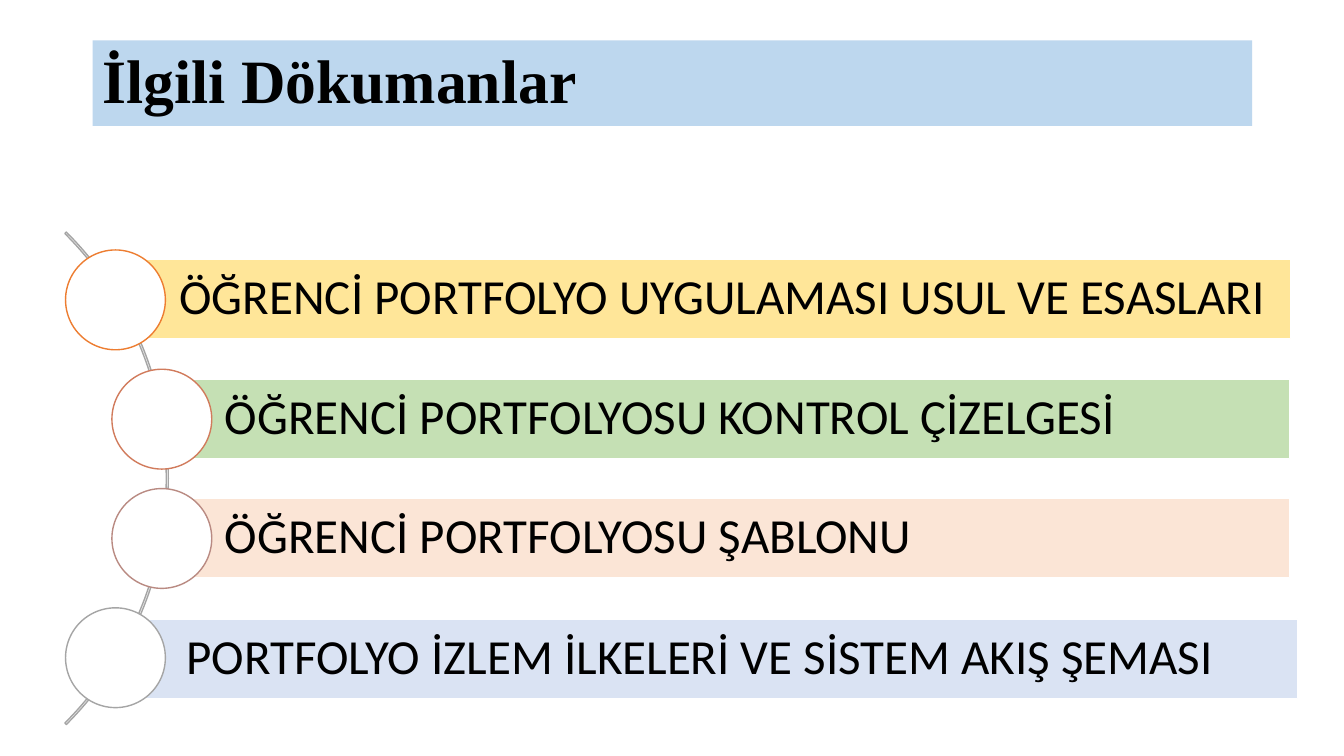
"""Builds the slide listing the related portfolio documents along an arc."""
from pptx import Presentation
from pptx.dml.color import RGBColor
from pptx.enum.shapes import MSO_SHAPE
from pptx.enum.text import MSO_ANCHOR, PP_ALIGN
from pptx.util import Inches, Pt

RECTANGLE = MSO_SHAPE.RECTANGLE
ELLIPSE = MSO_SHAPE.OVAL
BLOCK_ARC = MSO_SHAPE.BLOCK_ARC
MIDDLE = MSO_ANCHOR.MIDDLE
LEFT = PP_ALIGN.LEFT

BLACK = RGBColor(0x00, 0x00, 0x00)
WHITE = RGBColor(0xFF, 0xFF, 0xFF)
GRAY = RGBColor(0xA5, 0xA5, 0xA5)
TITLE_BLUE = RGBColor(0xBD, 0xD7, 0xEE)
YELLOW = RGBColor(0xFF, 0xE6, 0x99)
GREEN = RGBColor(0xC5, 0xE0, 0xB4)
PEACH = RGBColor(0xFB, 0xE5, 0xD6)
PALE_BLUE = RGBColor(0xDA, 0xE3, 0xF3)
ORANGE = RGBColor(0xED, 0x7D, 0x31)
COPPER = RGBColor(0xD1, 0x7B, 0x5C)
MAUVE = RGBColor(0xB9, 0x8A, 0x82)

CIRCLE_SIZE = 0.99
FIRST_CIRCLE_TOP = 2.48
ROW_PITCH = 3.55 / 3

DOCUMENTS = [
    ("ÖĞRENCİ PORTFOLYO UYGULAMASI USUL VE ESASLARI", 1.15, 2.57, 11.65, YELLOW, 0.65, ORANGE),
    ("ÖĞRENCİ PORTFOLYOSU KONTROL ÇİZELGESİ", 1.6, 3.76, 11.19, GREEN, 1.11, COPPER),
    ("ÖĞRENCİ PORTFOLYOSU ŞABLONU", 1.6, 4.94, 11.19, PEACH, 1.11, MAUVE),
    ("PORTFOLYO İZLEM İLKELERİ VE SİSTEM AKIŞ ŞEMASI", 1.22, 6.14, 11.65, PALE_BLUE, 0.65, GRAY),
]


def add_figure(kind, left, top, width, height, fill=None, line=None):
    shape = slide.shapes.add_shape(kind, Inches(left), Inches(top), Inches(width), Inches(height))
    shape.shadow.inherit = False
    if fill is None:
        shape.fill.background()
    else:
        shape.fill.solid()
        shape.fill.fore_color.rgb = fill
    if line is None:
        shape.line.fill.background()
    else:
        shape.line.color.rgb = line
        shape.line.width = Pt(1)
    return shape


def write_text(shape, text, font_name, size, left_inset, bold=False):
    text_frame = shape.text_frame
    text_frame.text = text
    text_frame.word_wrap = True
    text_frame.vertical_anchor = MIDDLE
    text_frame.margin_left = Inches(left_inset)
    paragraph = text_frame.paragraphs[0]
    paragraph.alignment = LEFT
    paragraph.line_spacing = 0.9
    font = paragraph.runs[0].font
    font.name = font_name
    font.size = Pt(size)
    font.bold = bold
    font.color.rgb = BLACK


presentation = Presentation()
presentation.slide_width = Inches(13.33)
presentation.slide_height = Inches(7.5)
slide = presentation.slides.add_slide(presentation.slide_layouts[6])

title = add_figure(RECTANGLE, 0.92, 0.4, 11.5, 0.85, TITLE_BLUE)
write_text(title, "İlgili Dökumanlar", "Times New Roman", 44, 0.1, bold=True)

arc = add_figure(BLOCK_ARC, -5.24, 1.29, 6.91, 6.91, line=GRAY)
arc.adjustments[0] = 189
arc.adjustments[1] = 27
arc.adjustments[2] = 0.003

for row, (text, bar_left, bar_top, bar_width, fill, circle_left, outline) in enumerate(DOCUMENTS):
    bar = add_figure(RECTANGLE, bar_left, bar_top, bar_width, 0.79, fill, WHITE)
    write_text(bar, text, "Calibri", 35, 0.63)
    circle_top = FIRST_CIRCLE_TOP + row * ROW_PITCH
    add_figure(ELLIPSE, circle_left, circle_top, CIRCLE_SIZE, CIRCLE_SIZE, WHITE, outline)

presentation.save("out.pptx")
